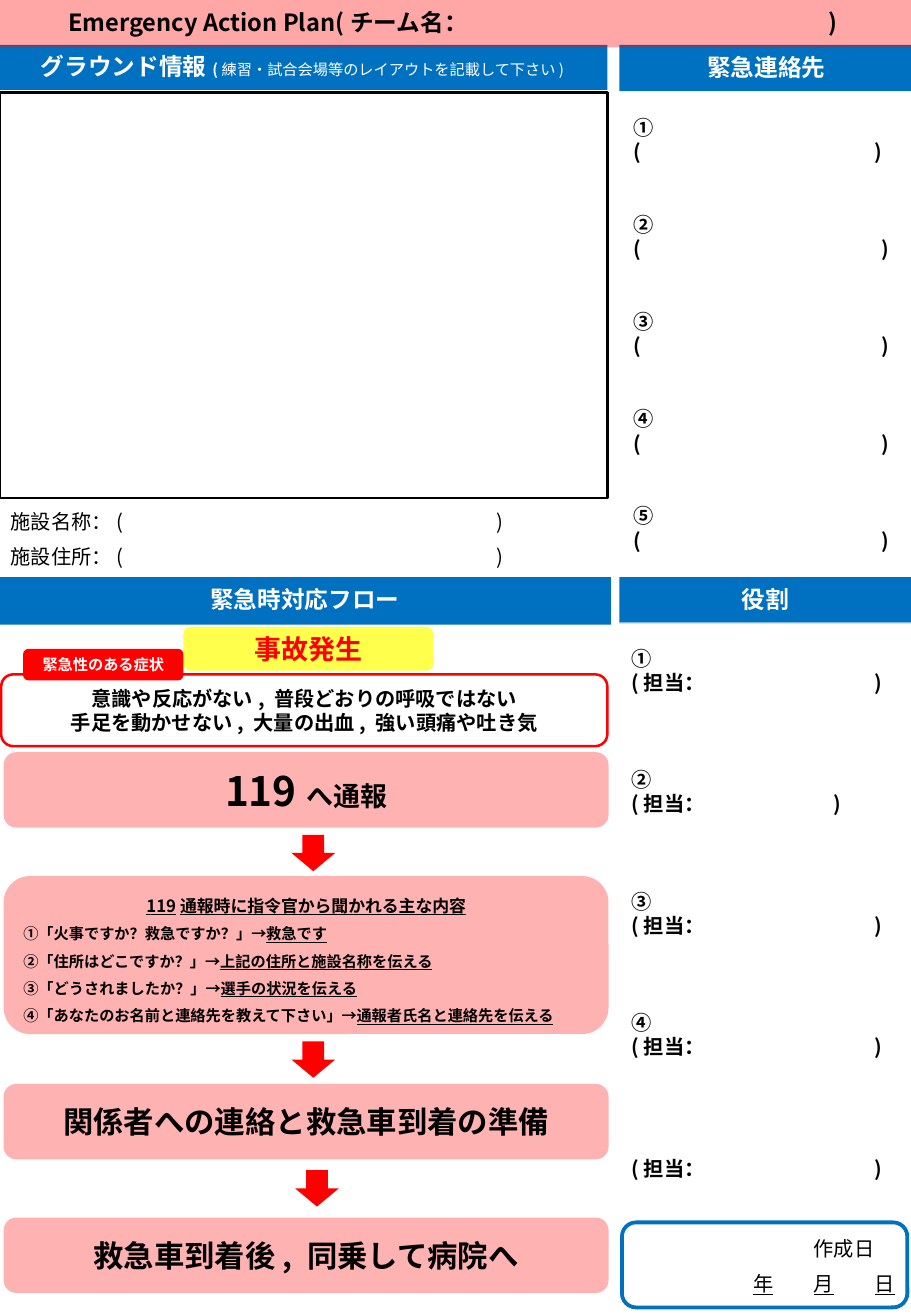
from dataclasses import dataclass

from lxml.etree import SubElement
from pptx import Presentation
from pptx.dml.color import RGBColor
from pptx.enum.shapes import MSO_SHAPE
from pptx.enum.text import MSO_ANCHOR, MSO_AUTO_SIZE, PP_ALIGN
from pptx.oxml.ns import qn
from pptx.util import Inches, Pt

COLOURS = {"blue": "0070C0", "red": "FF0000", "yellow": "FFFF00",
           "white": "FFFFFF", "black": "000000"}
FONT = "Noto Sans CJK JP"
LINE_HEIGHT = 1.2


@dataclass
class Span:
    """A stretch of text with one look."""
    text: str
    size: float = 12
    bold: bool = True
    colour: str = "black"
    underline: bool = False
    highlight: str = ""
    font: str = FONT


@dataclass
class Para:
    """A paragraph made of spans."""
    spans: list
    align: PP_ALIGN = PP_ALIGN.LEFT
    spacing: float = 1
    before: float = 0
    tabs: tuple = ()


def centred(*spans, spacing=1):
    """Return a centred paragraph."""
    return Para(list(spans), PP_ALIGN.CENTER, spacing)


def add_span(para, span):
    """Add one formatted run to a paragraph."""
    run = para.add_run()
    run.text = span.text
    font = run.font
    font.size, font.bold, font.underline = Pt(span.size), span.bold, span.underline
    font.name = span.font
    font.color.rgb = RGBColor.from_string(COLOURS[span.colour])
    properties = run._r.get_or_add_rPr()
    SubElement(properties, qn("a:ea"), typeface=span.font)
    if span.highlight:
        mark = SubElement(properties, qn("a:highlight"))
        SubElement(mark, qn("a:srgbClr"), val=COLOURS[span.highlight])
        properties.find(qn("a:latin")).addprevious(mark)


def write(shape, paras, left_inset=0.1, right_inset=0.1):
    """Fill a shape with paragraphs, centred vertically."""
    frame = shape.text_frame
    frame.word_wrap = True
    frame.auto_size = MSO_AUTO_SIZE.NONE
    frame.vertical_anchor = MSO_ANCHOR.MIDDLE
    frame.margin_left, frame.margin_right = Inches(left_inset), Inches(right_inset)
    frame.margin_top = frame.margin_bottom = Inches(0.05)
    for index, item in enumerate(paras):
        para = frame.add_paragraph() if index else frame.paragraphs[0]
        para.alignment = item.align
        size = max(span.size for span in item.spans)
        para.line_spacing = Pt(round(size * LINE_HEIGHT * item.spacing, 1))
        para.space_before = Pt(item.before)
        if item.tabs:
            stops = SubElement(para._p.get_or_add_pPr(), qn("a:tabLst"))
            for position in item.tabs:
                SubElement(stops, qn("a:tab"), pos=str(Inches(position)), algn="l")
        for span in item.spans:
            add_span(para, span)


def paint(shape, colour, opacity=100):
    """Give a shape a solid, possibly translucent fill."""
    shape.fill.solid()
    shape.fill.fore_color.rgb = RGBColor.from_string(COLOURS[colour])
    if opacity < 100:
        value = shape._element.spPr.find(qn("a:solidFill"))[0]
        SubElement(value, qn("a:alpha"), val=str(opacity * 1000))


def add_box(page, box, kind=MSO_SHAPE.RECTANGLE, fill="", opacity=100,
            line="", width=1.5, paras=(), **insets):
    """Add a preset shape with its fill, outline and text."""
    shape = page.shapes.add_shape(kind, *map(Inches, box))
    shape.shadow.inherit = False
    if fill:
        paint(shape, fill, opacity)
    else:
        shape.fill.background()
    if line:
        shape.line.color.rgb = RGBColor.from_string(COLOURS[line])
        shape.line.width = Pt(width)
    else:
        shape.line.fill.background()
    write(shape, paras, **insets)


def add_text(page, box, paras, **insets):
    """Add a plain text box."""
    write(page.shapes.add_textbox(*map(Inches, box)), paras, **insets)


def add_heading(page, box, text):
    """Add a blue section heading."""
    label = centred(Span(text, 14, colour="white"), spacing=0.9)
    add_box(page, box, fill="blue", paras=[label])


def add_ground(page, left, top):
    """Place the ground layout area, its title and the facility lines."""
    title = page.shapes.title
    title.left, title.top = Inches(left - 0.02), Inches(top)
    title.width, title.height = Inches(5.02), Inches(0.37)
    paint(title, "blue")
    write(title, [centred(Span("グラウンド情報", 14, colour="white"),
                          Span("(", 9, colour="white"),
                          Span("練習・試合会場等のレイアウトを記載して下さい)", 9, False, "white"),
                          spacing=0.9)])
    add_box(page, (left, top + 0.39, 5, 3.34), line="black")
    facility = [Para([Span(f"{label}：(\t)", bold=False)], spacing=0.9,
                     before=7.5 * index, tabs=(4,))
                for index, label in enumerate(("施設名称", "施設住所"))]
    add_text(page, (left - 0.01, top + 3.74, 5.02, 0.67), facility)


def add_contacts(page, left, top):
    """Place the emergency contact list."""
    add_heading(page, (left, top, 2.42, 0.38), "緊急連絡先")
    paras = []
    for index, number in enumerate("①②③④⑤"):
        spans = [Span(number)]
        if index == 0:
            spans.append(Span("\t", highlight="yellow"))
        paras.append(Para(spans, before=28.8 if index else 0, tabs=(0.5,)))
        paras.append(Para([Span("(\t)")], tabs=(2.04 if index else 1.98,)))
    add_text(page, (left + 0.02, top + 0.37, 2.4, 4.01), paras)


def add_roles(page, left, top):
    """Place the list of roles."""
    add_heading(page, (left, top, 2.4, 0.38), "役割")
    paras = []
    for index, number in enumerate("①②③④"):
        paras.append(Para([Span(number)], before=43.2 if index else 0))
        paras.append(Para([Span("(担当：\t)")], tabs=(1.66 if index == 1 else 2,)))
    paras.append(Para([Span("(担当：\t)")], before=57.6, tabs=(2,)))
    add_box(page, (left, top + 0.37, 2.4, 4.79), fill="white", opacity=50, paras=paras)


def add_symptoms(page, left, top):
    """Place the accident label and the urgent symptoms."""
    rounded = MSO_SHAPE.ROUNDED_RECTANGLE
    add_box(page, (left + 1.51, top, 2.06, 0.36), rounded, "yellow", 70,
            paras=[centred(Span("事故発生", 16, colour="red"))])
    symptoms = ("意識や反応がない, 普段どおりの呼吸ではない",
                "手足を動かせない, 大量の出血, 強い頭痛や吐き気")
    add_box(page, (left + 0.01, top + 0.39, 4.99, 0.59), rounded, line="red",
            paras=[centred(Span(text)) for text in symptoms])
    add_box(page, (left + 0.19, top + 0.18, 1.32, 0.26), rounded, "red",
            paras=[centred(Span("緊急性のある症状", 9, colour="white", font="Calibri"))])


def add_steps(page, left, top):
    """Place the response steps and the arrows between them."""
    answers = (("①「火事ですか？救急ですか？」→", "救急です"),
               ("②「住所はどこですか？」→", "上記の住所と施設名称を伝える"),
               ("③「どうされましたか？」→", "選手の状況を伝える"),
               ("④「あなたのお名前と連絡先を教えて下さい」→", "通報者氏名と連絡先を伝える"))
    questions = [centred(Span("119通報時に指令官から聞かれる主な内容", 10, underline=True),
                         spacing=1.5)]
    questions += [Para([Span(question, 9), Span(answer, 9, underline=True)], spacing=1.5)
                  for question, answer in answers]
    steps = ((0, 0.62, [centred(Span("119", 24), Span("へ通報", 16))]),
             (1.02, 1.3, questions),
             (2.73, 0.62, [centred(Span("関係者への連絡と救急車到着の準備", 18))]),
             (3.83, 0.62, [centred(Span("救急車到着後, 同乗して病院へ", 18))]))
    for offset, height, paras in steps:
        add_box(page, (left, top + offset, 4.98, height), MSO_SHAPE.ROUNDED_RECTANGLE,
                "red", 30, paras=paras)
    for across, down in ((2.37, 0.68), (2.37, 2.38), (2.4, 3.44)):
        add_box(page, (left + across, top + down, 0.36, 0.3), MSO_SHAPE.DOWN_ARROW, "red")


def add_date(page, left, top):
    """Place the framed date of preparation."""
    paras = [Para([Span("\t作成日", bold=False)], spacing=0.9, tabs=(1.16,)),
             Para([Span("\t年\t月\t日", bold=False, underline=True)], spacing=0.9,
                  before=7.5, tabs=(0.66, 1.16, 1.66))]
    add_text(page, (left - 0.12, top + 0.03, 2.47, 0.67), paras,
             left_inset=0.54, right_inset=0.05)
    add_box(page, (left, top, 2.35, 0.7), MSO_SHAPE.ROUNDED_RECTANGLE, line="blue", width=2.25)


def add_banner(page, left, top):
    """Place the plan name across the top."""
    name = Para([Span("Emergency Action Plan(チーム名：\t)", 14)], spacing=0.9, tabs=(6.26,))
    add_box(page, (left, top, 7.53, 0.39), fill="red", opacity=35, paras=[name],
            left_inset=0.59)


def main():
    """Build the emergency action plan."""
    deck = Presentation()
    deck.slide_width, deck.slide_height = Inches(7.5), Inches(10.83)
    page = deck.slides.add_slide(deck.slide_layouts[5])
    add_ground(page, 0, 0.37)
    add_contacts(page, 5.1, 0.37)
    add_heading(page, (-0.01, 4.75, 5.04, 0.39), "緊急時対応フロー")
    add_symptoms(page, 0, 5.16)
    add_roles(page, 5.1, 4.75)
    add_banner(page, -0.03, 0)
    add_date(page, 5.12, 10.06)
    add_steps(page, 0.03, 6.19)
    deck.save("out.pptx")


if __name__ == "__main__":
    main()
